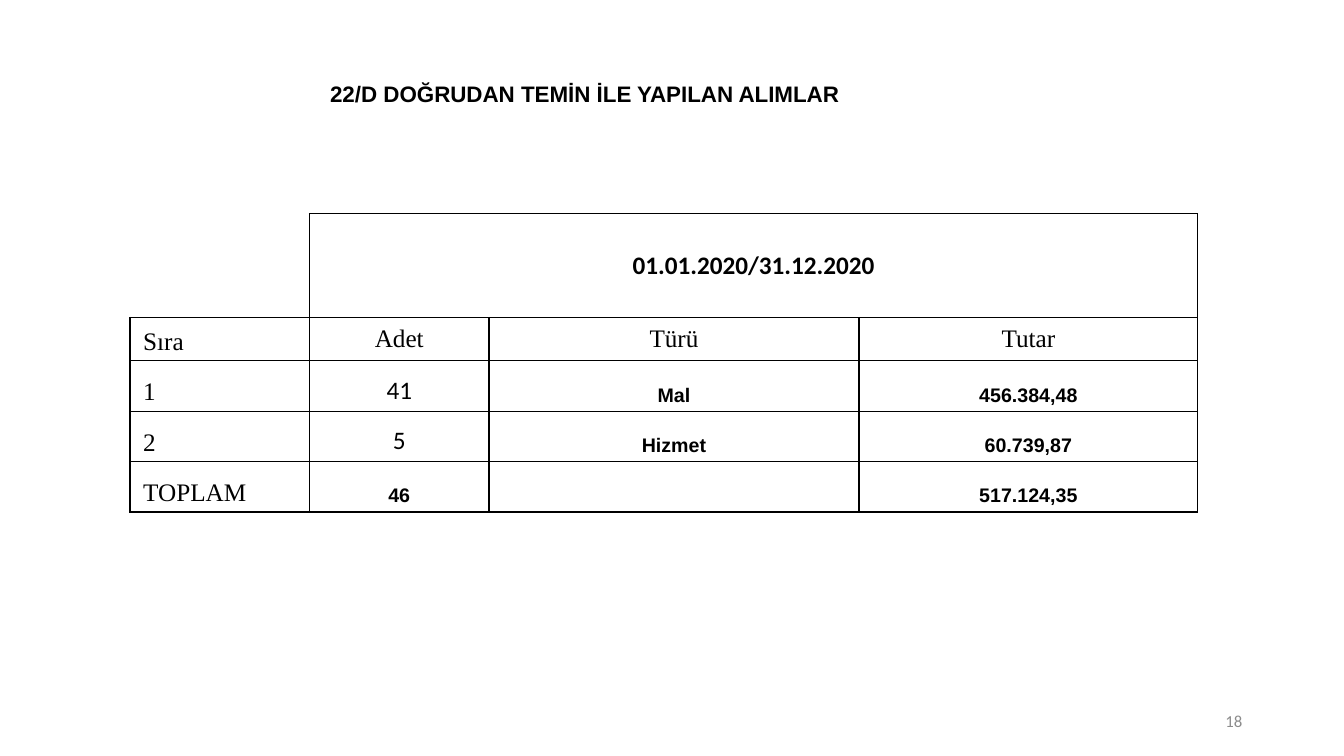
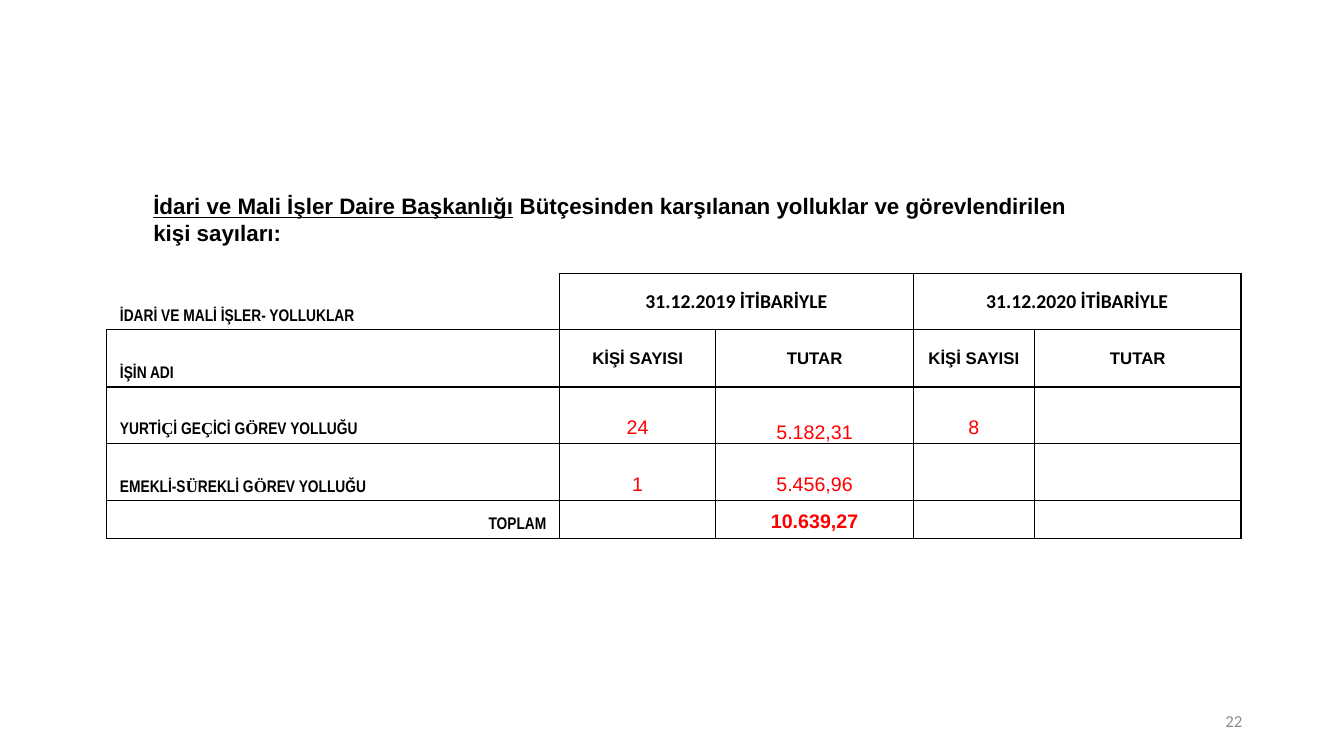
from dataclasses import dataclass, replace
from itertools import groupby

from lxml import etree
from pptx import Presentation
from pptx.dml.color import RGBColor
from pptx.enum.text import MSO_ANCHOR, MSO_AUTO_SIZE, PP_ALIGN
from pptx.oxml.ns import qn
from pptx.util import Inches, Pt

LEFT, CENTER, RIGHT = PP_ALIGN.LEFT, PP_ALIGN.CENTER, PP_ALIGN.RIGHT
TOP, MIDDLE, BOTTOM = MSO_ANCHOR.TOP, MSO_ANCHOR.MIDDLE, MSO_ANCHOR.BOTTOM
NO_AUTOFIT = MSO_AUTO_SIZE.NONE
TITLE_ONLY = 5


@dataclass(frozen=True)
class Theme:
    black: str = "000000"
    red: str = "FF0000"
    gray: str = "8C8C8C"
    sans: str = "Arial"
    narrow: str = "Arial Narrow"
    body: str = "Calibri"
    serif: str = "Times New Roman"
    small: int = 12
    medium: int = 14
    title: int = 16
    large: int = 18
    border: float = 1
    cell_margins: tuple[float, ...] = (0.13, 0.05, 0.13, 0.05)
    tight_margins: tuple[float, ...] = (0.01, 0.01, 0.01, 0)
    serif_letters: str = "ÇÖÜ"


THEME = Theme()


@dataclass(frozen=True)
class Style:
    font: str
    size: int
    color: str = THEME.black
    bold: bool = False
    align: PP_ALIGN = CENTER
    anchor: MSO_ANCHOR = BOTTOM
    margins: tuple[float, ...] = THEME.cell_margins


@dataclass(frozen=True)
class Entry:
    text: str
    style: Style
    columns: int = 1


@dataclass(frozen=True)
class Grid:
    left: float
    top: float
    widths: tuple[float, ...]
    heights: tuple[float, ...]
    rows: tuple[tuple[Entry | None, ...], ...]


@dataclass(frozen=True)
class Page:
    number: str
    title: tuple[tuple[str, bool], ...]
    title_frame: tuple[float, float, float, float]
    title_align: PP_ALIGN
    grid: Grid


TITLE = Style(THEME.sans, THEME.title, bold=True, anchor=TOP)
NUMBER = Style(THEME.body, THEME.small, THEME.gray, align=RIGHT, anchor=MIDDLE)
PERIOD = Style(THEME.body, THEME.large, bold=True, anchor=MIDDLE)
SMALL_PERIOD = replace(PERIOD, size=THEME.medium)
HEADING = Style(THEME.serif, THEME.large, anchor=MIDDLE)
ROW_LABEL = replace(HEADING, align=LEFT, anchor=BOTTOM)
COUNT = Style(THEME.body, THEME.large)
VALUE = Style(THEME.sans, THEME.medium, bold=True)
SUBHEADING = Style(THEME.sans, THEME.small, bold=True, anchor=MIDDLE)
JOB_LABEL = Style(THEME.narrow, THEME.small, bold=True, align=LEFT)
RED_VALUE = Style(THEME.sans, THEME.medium, THEME.red)
BLANK = Style(THEME.sans, THEME.small)

PURCHASES = Grid(
    1.29, 2.12, (1.78, 1.78, 3.67, 3.36), (1.03, 0.43, 0.5, 0.5, 0.5),
    (
        (None, Entry("01.01.2020/31.12.2020", PERIOD, 3), None, None),
        (Entry("Sıra", ROW_LABEL), Entry("Adet", HEADING),
         Entry("Türü", HEADING), Entry("Tutar", HEADING)),
        (Entry("1", ROW_LABEL), Entry("41", COUNT),
         Entry("Mal", VALUE), Entry("456.384,48", VALUE)),
        (Entry("2", ROW_LABEL), Entry("5", COUNT),
         Entry("Hizmet", VALUE), Entry("60.739,87", VALUE)),
        (Entry("TOPLAM", ROW_LABEL), Entry("46", VALUE),
         None, Entry("517.124,35", VALUE)),
    ),
)

PEOPLE_AND_AMOUNT = (Entry("KİŞİ SAYISI", SUBHEADING), Entry("TUTAR", SUBHEADING))

ALLOWANCES = Grid(
    1.06, 2.71, (4.49, 1.55, 1.96, 1.2, 2.05), (0.56, 0.57, 0.56, 0.57, 0.37),
    (
        (Entry("İDARİ VE MALİ İŞLER- YOLLUKLAR", JOB_LABEL),
         Entry("31.12.2019 İTİBARİYLE", SMALL_PERIOD, 2), None,
         Entry("31.12.2020 İTİBARİYLE", SMALL_PERIOD, 2), None),
        (Entry("İŞİN ADI", JOB_LABEL), *PEOPLE_AND_AMOUNT, *PEOPLE_AND_AMOUNT),
        (Entry("YURTİÇİ GEÇİCİ GÖREV YOLLUĞU", JOB_LABEL), Entry("24", RED_VALUE),
         Entry("5.182,31", replace(RED_VALUE, margins=THEME.tight_margins)),
         Entry("8", RED_VALUE), None),
        (Entry("EMEKLİ-SÜREKLİ GÖREV YOLLUĞU", JOB_LABEL), Entry("1", RED_VALUE),
         Entry("5.456,96", RED_VALUE), None, None),
        (Entry("TOPLAM", replace(JOB_LABEL, align=RIGHT)), None,
         Entry("10.639,27", replace(RED_VALUE, bold=True)), None, None),
    ),
)

PAGES = (
    Page("18", (("22/D DOĞRUDAN TEMİN İLE YAPILAN ALIMLAR", False),),
         (0.24, 0.74, 11.12, 0.37), CENTER, PURCHASES),
    Page("22", (("İdari ve Mali İşler Daire Başkanlığı", True),
                (" Bütçesinden karşılanan yolluklar ve görevlendirilen kişi sayıları:", False)),
         (1.42, 1.86, 9.55, 0.64), LEFT, ALLOWANCES),
)


def add_span(para, text: str, style: Style, underline: bool = False) -> None:
    span = para.add_run()
    span.text = text
    span.font.name = style.font
    span.font.size = Pt(style.size)
    span.font.bold = style.bold
    span.font.underline = underline
    span.font.color.rgb = RGBColor.from_string(style.color)


def fill_box(box, frame: tuple[float, ...], spans: tuple[tuple[str, bool], ...],
             style: Style) -> None:
    """Place a text shape and write its (text, underlined) spans."""
    box.left, box.top, box.width, box.height = map(Inches, frame)
    text_frame = box.text_frame
    text_frame.word_wrap = True
    text_frame.auto_size = NO_AUTOFIT
    text_frame.vertical_anchor = style.anchor
    para = text_frame.paragraphs[0]
    para.alignment = style.align
    for text, underline in spans:
        add_span(para, text, style, underline)


def set_borders(cell, hidden_sides: str) -> None:
    """Outline a cell in black, leaving the given sides (of LRTB) without a line."""
    properties = cell._tc.get_or_add_tcPr()
    for side in "LRTB":
        line = etree.SubElement(properties, qn(f"a:ln{side}"), w=str(Pt(THEME.border)))
        if side in hidden_sides:
            etree.SubElement(line, qn("a:noFill"))
        else:
            fill = etree.SubElement(line, qn("a:solidFill"))
            etree.SubElement(fill, qn("a:srgbClr"), val=THEME.black)


def write_cell(cell, entry: Entry) -> None:
    style = entry.style
    cell.vertical_anchor = style.anchor
    (cell.margin_left, cell.margin_top,
     cell.margin_right, cell.margin_bottom) = map(Inches, style.margins)
    para = cell.text_frame.paragraphs[0]
    para.alignment = style.align
    if not entry.text:
        etree.SubElement(para._p, qn("a:endParaRPr"), sz=str(style.size * 100))
    elif style.font == THEME.narrow:
        serif_style = replace(style, font=THEME.serif)
        for is_serif, letters in groupby(entry.text, lambda letter: letter in THEME.serif_letters):
            add_span(para, "".join(letters), serif_style if is_serif else style)
    else:
        add_span(para, entry.text, style)


def add_grid(slide, grid: Grid) -> None:
    table = slide.shapes.add_table(
        len(grid.heights), len(grid.widths), Inches(grid.left), Inches(grid.top),
        Inches(sum(grid.widths)), Inches(sum(grid.heights))).table
    table.first_row = table.horz_banding = False
    for column, width in zip(table.columns, grid.widths):
        column.width = Inches(width)
    for row, height in zip(table.rows, grid.heights):
        row.height = Inches(height)
    for row_index, entries in enumerate(grid.rows):
        for column_index, entry in enumerate(entries):
            cell = table.cell(row_index, column_index)
            set_borders(cell, "LT" if row_index == column_index == 0 else "")
            cell.fill.background()
            write_cell(cell, entry or Entry("", BLANK))
            if entry and entry.columns > 1:
                cell.merge(table.cell(row_index, column_index + entry.columns - 1))


def add_page(deck, page: Page) -> None:
    slide = deck.slides.add_slide(deck.slide_layouts[TITLE_ONLY])
    fill_box(slide.shapes.title, page.title_frame, page.title,
             replace(TITLE, align=page.title_align))
    add_grid(slide, page.grid)
    number_frame = (9.42, 6.95, 3, 0.4)
    number_box = slide.shapes.add_textbox(*map(Inches, number_frame))
    fill_box(number_box, number_frame, ((page.number, False),), NUMBER)


def main() -> None:
    deck = Presentation()
    deck.slide_width, deck.slide_height = Inches(13.33), Inches(7.5)
    for page in PAGES:
        add_page(deck, page)
    deck.save("out.pptx")


if __name__ == "__main__":
    main()
